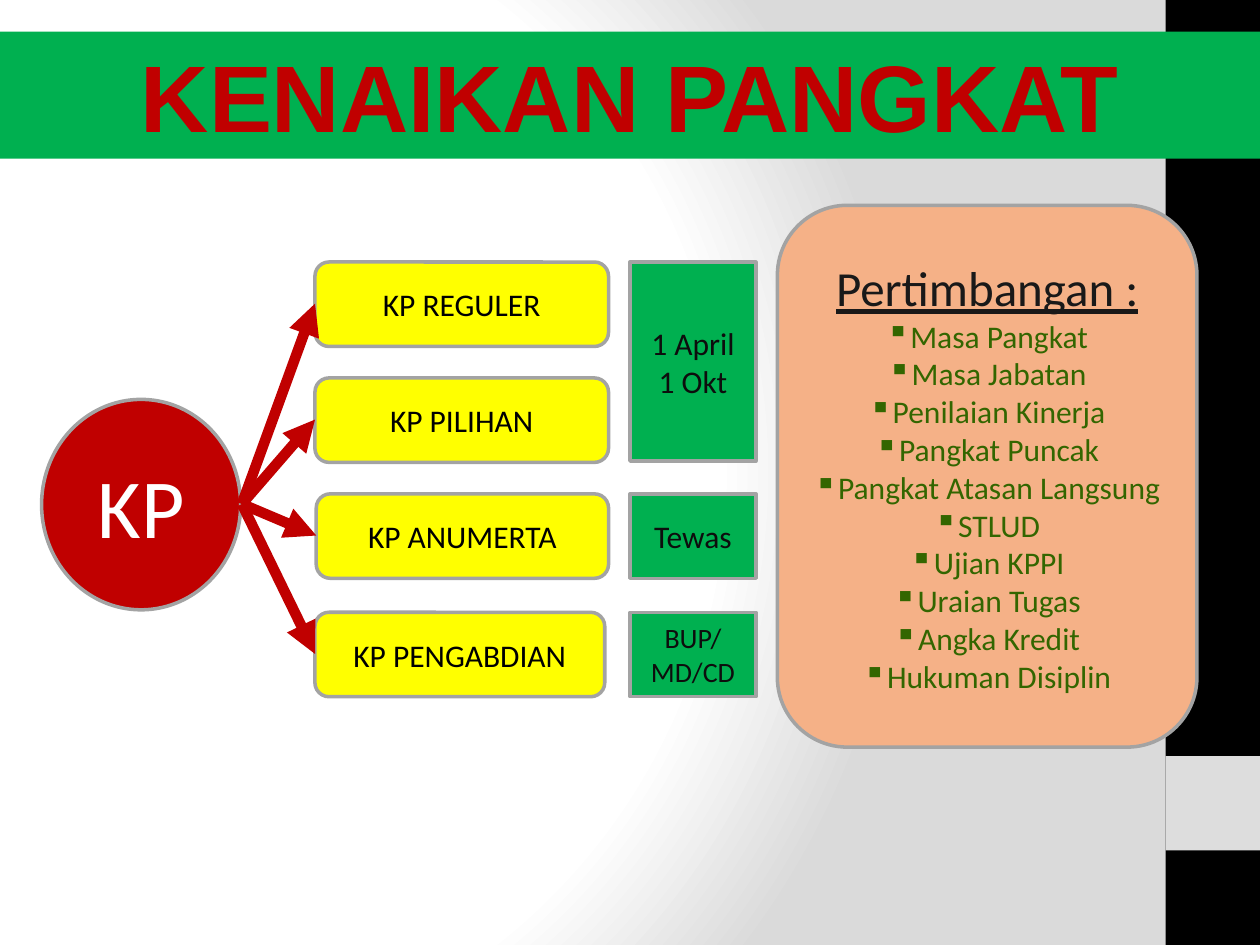
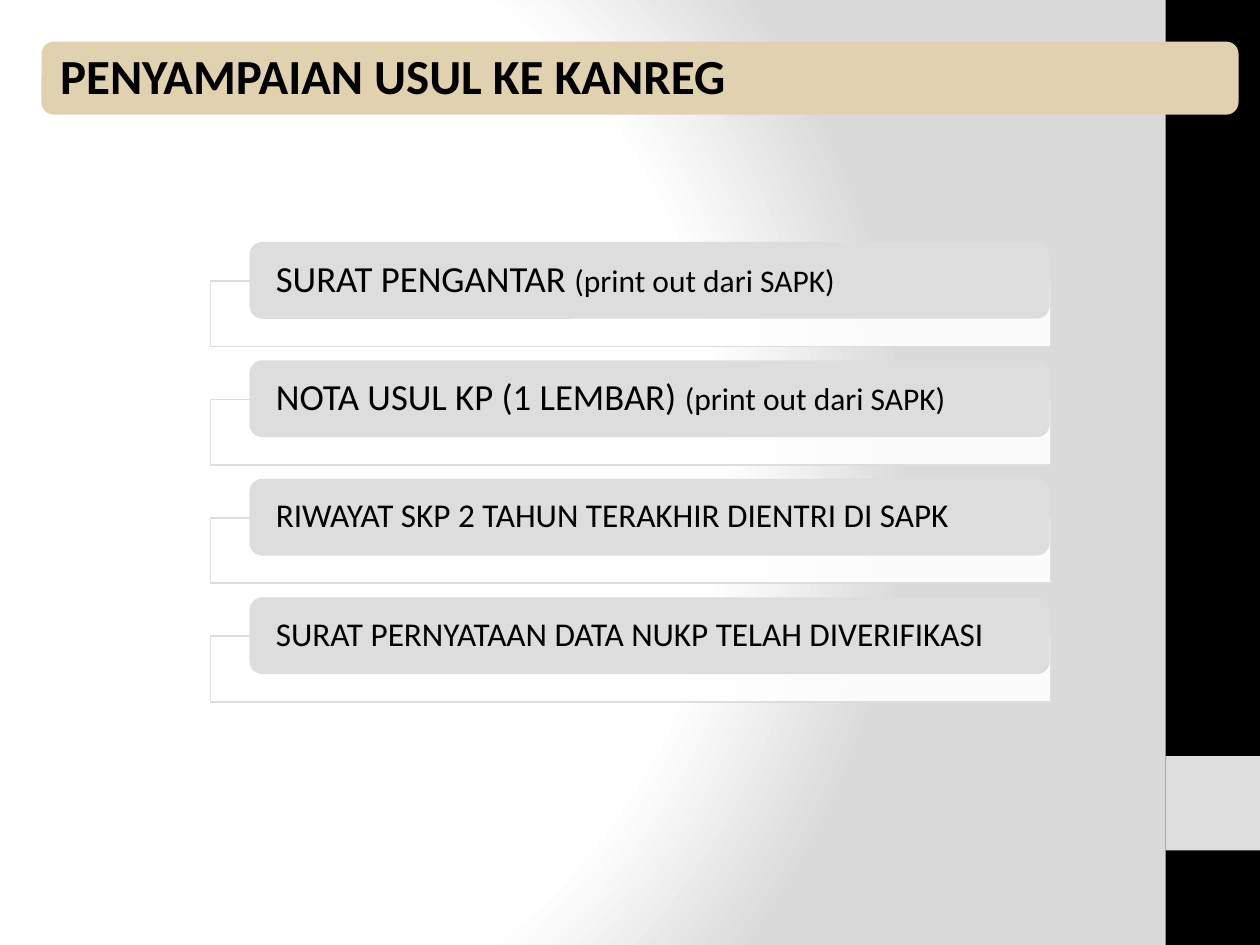
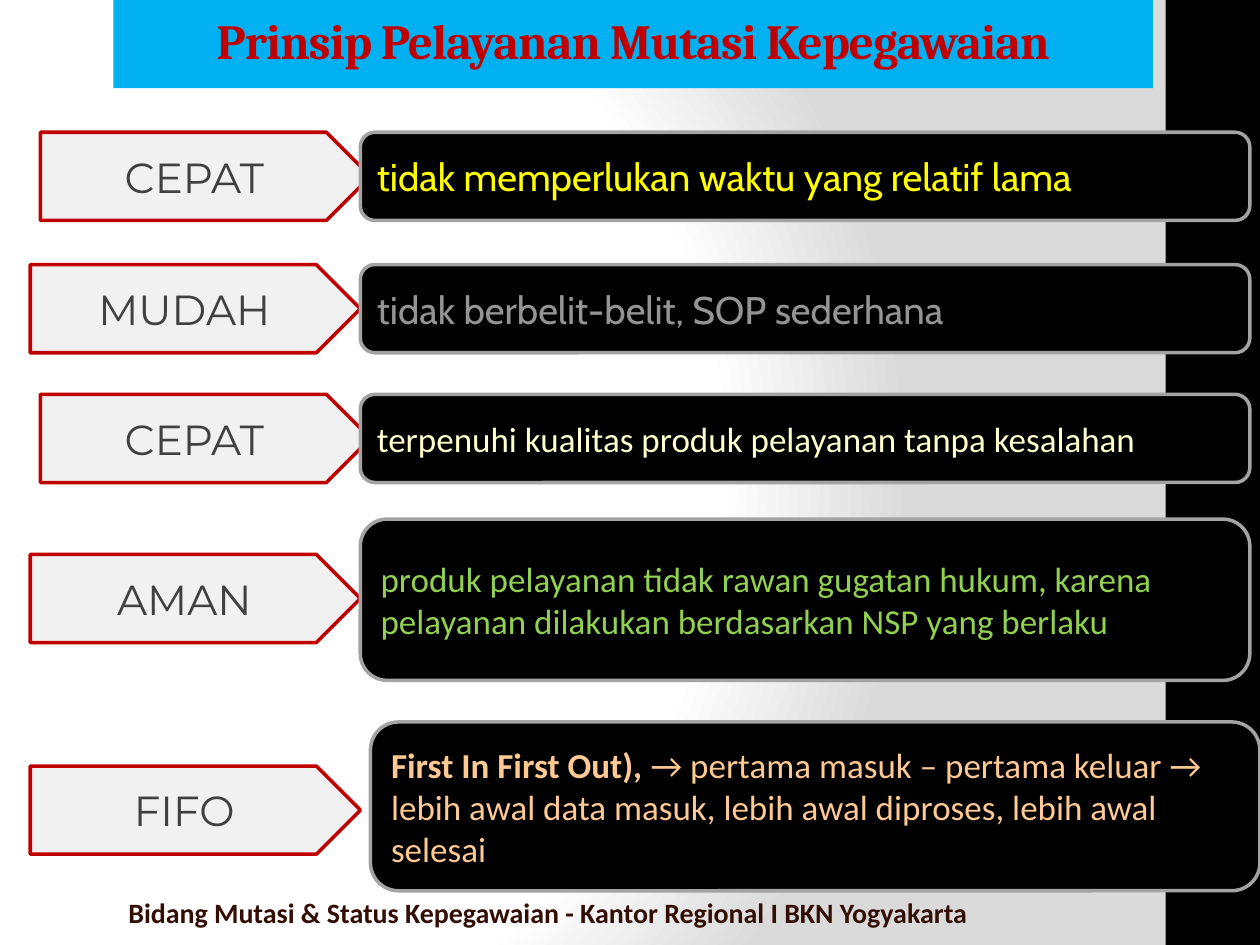
"""Build three slides on civil service rank promotion."""
from typing import NamedTuple

import pptx
import pptx.dml.color
import pptx.enum.shapes
import pptx.enum.text
import pptx.oxml
import pptx.oxml.ns
import pptx.util

Inches = pptx.util.Inches
Pt = pptx.util.Pt
RGBColor = pptx.dml.color.RGBColor
SHAPE = pptx.enum.shapes.MSO_SHAPE
LEFT = pptx.enum.text.PP_ALIGN.LEFT
CENTER = pptx.enum.text.PP_ALIGN.CENTER
qn = pptx.oxml.ns.qn

BLACK = RGBColor(0x00, 0x00, 0x00)
WHITE = RGBColor(0xFF, 0xFF, 0xFF)
RED = RGBColor(0xC0, 0x00, 0x00)
GREEN = RGBColor(0x00, 0xB0, 0x50)
YELLOW = RGBColor(0xFF, 0xFF, 0x00)
SKY = RGBColor(0x00, 0xB0, 0xF0)
SAND = RGBColor(0xE0, 0xD2, 0xAE)
PEACH = RGBColor(0xF5, 0xB1, 0x87)
SILVER = RGBColor(0xDD, 0xDD, 0xDD)
EDGE = RGBColor(0xA3, 0xA3, 0xA3)
PALE = RGBColor(0xF1, 0xF1, 0xF1)
INK = RGBColor(0x0D, 0x0D, 0x0D)
CHARCOAL = RGBColor(0x19, 0x19, 0x19)
SLATE = RGBColor(0x40, 0x40, 0x40)
FOREST = RGBColor(0x33, 0x66, 0x00)
GRAY = RGBColor(0x94, 0x94, 0x94)
CREAM = RGBColor(0xFF, 0xFF, 0xCC)
LIME = RGBColor(0x92, 0xD0, 0x50)
APRICOT = RGBColor(0xFF, 0xC9, 0x93)
BROWN = RGBColor(0x32, 0x0E, 0x04)

BACKGROUND = (
    '<a:gradFill xmlns:a="http://schemas.openxmlformats.org/drawingml/2006/main" rotWithShape="1">'
    '<a:gsLst><a:gs pos="0"><a:srgbClr val="FFFFFF"/></a:gs>'
    '<a:gs pos="75000"><a:srgbClr val="FFFFFF"/></a:gs>'
    '<a:gs pos="100000"><a:srgbClr val="DADADA"/></a:gs></a:gsLst>'
    '<a:path path="circle"><a:fillToRect l="20000" t="50000" r="100000" b="50000"/></a:path>'
    '</a:gradFill>'
)


class Run(NamedTuple):
    """A stretch of text in one style."""
    text: str
    size: float
    color: RGBColor
    font: str = "Calibri"
    bold: bool = False
    underline: bool = False
    spacing: int = 0


def add_run(p, run):
    """Append a styled run to a paragraph."""
    r = p.add_run()
    r.text = run.text
    r.font.size = Pt(run.size)
    r.font.name = run.font
    r.font.bold = run.bold
    r.font.underline = run.underline
    r.font.color.rgb = run.color
    if run.spacing:
        r.font._element.set("spc", str(run.spacing))


def write(sp, paragraphs, align=CENTER, inset=0.1, line_spacing=None):
    """Fill a shape with paragraphs, each a list of runs."""
    tf = sp.text_frame
    tf.word_wrap = True
    tf.vertical_anchor = pptx.enum.text.MSO_ANCHOR.MIDDLE
    tf.margin_left = tf.margin_right = Inches(inset)
    tf.margin_top = tf.margin_bottom = Inches(0.05)
    for i, runs in enumerate(paragraphs):
        p = tf.add_paragraph() if i else tf.paragraphs[0]
        p.alignment = align
        if line_spacing:
            p.line_spacing = line_spacing
        for run in runs:
            add_run(p, run)


def add_bullet(p):
    """Give a paragraph a small square bullet with a hanging indent."""
    pPr = p._p.get_or_add_pPr()
    pPr.set("marL", str(Inches(0.19)))
    pPr.set("indent", str(-Inches(0.19)))
    pPr.append(pPr.makeelement(qn("a:buChar"), {"char": "▪"}))


def add_box(s, kind, box, fill, line=None, width=2):
    """Add a flat preset shape at box, given as left, top, width, height."""
    sp = s.shapes.add_shape(kind, *map(Inches, box))
    sp.shadow.inherit = False
    sp.fill.solid()
    sp.fill.fore_color.rgb = fill
    if line is None:
        sp.line.fill.background()
    else:
        sp.line.color.rgb = line
        sp.line.width = Pt(width)
    return sp


def add_arrow(s, start, end):
    """Add a thick red arrow from start to end."""
    cx = s.shapes.add_connector(
        pptx.enum.shapes.MSO_CONNECTOR.STRAIGHT, *map(Inches, start + end))
    cx.line.color.rgb = RED
    cx.line.width = Pt(6)
    ln = cx.line._get_or_add_ln()
    ln.append(ln.makeelement(qn("a:tailEnd"), {"type": "triangle"}))
    spPr = cx._element.spPr
    spPr.append(spPr.makeelement(qn("a:effectLst"), {}))


def add_slide(prs):
    """Add a blank slide with the shared background and side band."""
    s = prs.slides.add_slide(prs.slide_layouts[6])
    s.background.fill.gradient()
    grad = next(s.element.iter(qn("a:gradFill")))
    grad.getparent().replace(grad, pptx.oxml.parse_xml(BACKGROUND))
    add_box(s, SHAPE.RECTANGLE, (9.25, 0, 0.75, 7.5), BLACK)
    add_box(s, SHAPE.RECTANGLE, (9.25, 6, 0.75, 0.75), SILVER)
    return s


def add_title(s, kind, box, fill, run, **layout):
    """Add the title band of a slide."""
    write(add_box(s, kind, box, fill), [[run]], **layout)


def add_considerations(s):
    """Add the panel that lists what a promotion takes into account."""
    items = ["Masa Pangkat", "Masa Jabatan", "Penilaian Kinerja", "Pangkat Puncak",
             "Pangkat Atasan Langsung", "STLUD", "Ujian KPPI", "Uraian Tugas",
             "Angka Kredit", "Hukuman Disiplin"]
    sp = add_box(s, SHAPE.ROUNDED_RECTANGLE, (6.17, 1.63, 3.33, 4.3), PEACH, EDGE)
    heading = Run("Pertimbangan :", 28, CHARCOAL, underline=True)
    # The panel's own corner radius already insets the text.
    write(sp, [[heading]] + [[Run(item, 18, FOREST)] for item in items])
    for p in sp.text_frame.paragraphs[1:]:
        add_bullet(p)


def add_requirement(s, top, runs):
    """Add a labelled bar over its outlined bracket."""
    bracket = add_box(s, SHAPE.RECTANGLE, (1.67, top + 0.31, 6.67, 0.52), WHITE, SILVER, 1)
    color = bracket._element.spPr.find(qn("a:solidFill"))[0]
    color.append(color.makeelement(qn("a:alpha"), {"val": "90000"}))
    bar = add_box(s, SHAPE.ROUNDED_RECTANGLE, (1.98, top, 6.35, 0.61), SILVER)
    write(bar, [runs], LEFT, 0.18, 0.9)


def add_principle(s, label, label_at, detail_box, runs):
    """Add a pointed label and the dark box that explains it."""
    tag = add_box(s, SHAPE.PENTAGON, label_at + (2.62, 0.7), PALE, RED)
    write(tag, [[Run(label, 24, SLATE, "Montserrat")]])
    detail = add_box(s, SHAPE.ROUNDED_RECTANGLE, detail_box, BLACK, EDGE)
    write(detail, [runs], LEFT)


def build_promotion(prs):
    """Build the slide on kinds of promotion."""
    s = add_slide(prs)
    hub = add_box(s, SHAPE.OVAL, (0.33, 3.17, 1.58, 1.67), RED, EDGE)
    write(hub, [[Run("KP", 48, WHITE)]])
    kinds = [("KP REGULER", 2.5, 2.08, 2.33), ("KP PILIHAN", 2.5, 3, 2.33),
             ("KP ANUMERTA", 2.51, 3.92, 2.32), ("KP PENGABDIAN", 2.5, 4.86, 2.3)]
    for name, left, top, width in kinds:
        sp = add_box(s, SHAPE.ROUNDED_RECTANGLE, (left, top, width, 0.67), YELLOW, EDGE)
        write(sp, [[Run(name, 18, BLACK)]])
    add_considerations(s)
    periods = [(["1 April", "1 Okt"], 2.08, 1.58, 18), (["Tewas"], 3.92, 0.67, 18),
               (["BUP/ MD/CD"], 4.86, 0.67, 16)]
    for lines, top, height, size in periods:
        sp = add_box(s, SHAPE.RECTANGLE, (5, top, 1, height), GREEN, EDGE)
        write(sp, [[Run(line, size, INK)] for line in lines])
    for _, left, top, _ in kinds:
        add_arrow(s, (1.92, 4), (left, top + 0.33))
    add_title(s, SHAPE.RECTANGLE, (0, 0.25, 10, 1.01), GREEN,
              Run("KENAIKAN PANGKAT", 54, RED, "Arial", True))


def build_submission(prs):
    """Build the slide on documents to submit."""
    s = add_slide(prs)
    add_title(s, SHAPE.ROUNDED_RECTANGLE, (0.33, 0.33, 9.5, 0.58), SAND,
              Run("PENYAMPAIAN USUL KE KANREG", 28, BLACK, bold=True),
              align=LEFT, inset=0.12, line_spacing=0.9)
    printed = Run("(print out dari SAPK)", 18, BLACK)
    documents = [
        [Run("SURAT PENGANTAR ", 21, BLACK), printed],
        [Run("NOTA USUL KP (1 LEMBAR) ", 21, BLACK), printed],
        [Run("RIWAYAT SKP 2 TAHUN TERAKHIR DIENTRI DI SAPK", 19, BLACK)],
        [Run("SURAT PERNYATAAN DATA NUKP TELAH DIVERIFIKASI", 19, BLACK)],
    ]
    for i, runs in enumerate(documents):
        add_requirement(s, 1.92 + 0.94 * i, runs)


def build_principles(prs):
    """Build the slide on service principles."""
    s = add_slide(prs)
    add_title(s, SHAPE.RECTANGLE, (0.9, 0, 8.25, 0.7), SKY,
              Run("Prinsip Pelayanan Mutasi Kepegawaian", 28, RED, "Cambria", True, spacing=-50),
              line_spacing=0.85)
    footer = s.shapes.add_textbox(*map(Inches, (0.86, 7.07, 9.06, 0.38)))
    write(footer, [[Run("Bidang Mutasi & Status Kepegawaian - Kantor Regional I BKN Yogyakarta",
                        16, BROWN, bold=True)]], LEFT, 0.16, 0.9)
    principles = [
        ("CEPAT", (0.32, 1.05), (2.86, 1.05, 7.06, 0.7),
         [Run("tidak memperlukan waktu yang relatif lama", 22, YELLOW, "Cabin")]),
        ("MUDAH", (0.24, 2.1), (2.86, 2.1, 7.06, 0.7),
         [Run("tidak berbelit-belit, SOP sederhana", 22, GRAY, "Cabin")]),
        ("CEPAT", (0.32, 3.13), (2.86, 3.13, 7.06, 0.7),
         [Run("terpenuhi kualitas produk pelayanan tanpa kesalahan", 20, CREAM)]),
        ("AMAN", (0.24, 4.4), (2.86, 4.12, 7.06, 1.28),
         [Run("produk pelayanan tidak rawan gugatan hukum, karena pelayanan "
              "dilakukan berdasarkan NSP yang berlaku", 20, LIME)]),
        ("FIFO", (0.24, 6.08), (2.94, 5.73, 7.06, 1.34),
         [Run("First In First Out), ", 20, APRICOT, bold=True),
          Run("→ pertama masuk – pertama keluar → lebih awal data masuk, "
              "lebih awal diproses, lebih awal selesai", 20, APRICOT)]),
    ]
    for principle in principles:
        add_principle(s, *principle)


def main():
    """Build and save the presentation."""
    prs = pptx.Presentation()
    prs.slide_width = Inches(10)
    prs.slide_height = Inches(7.5)
    build_promotion(prs)
    build_submission(prs)
    build_principles(prs)
    prs.save("out.pptx")


if __name__ == "__main__":
    main()
